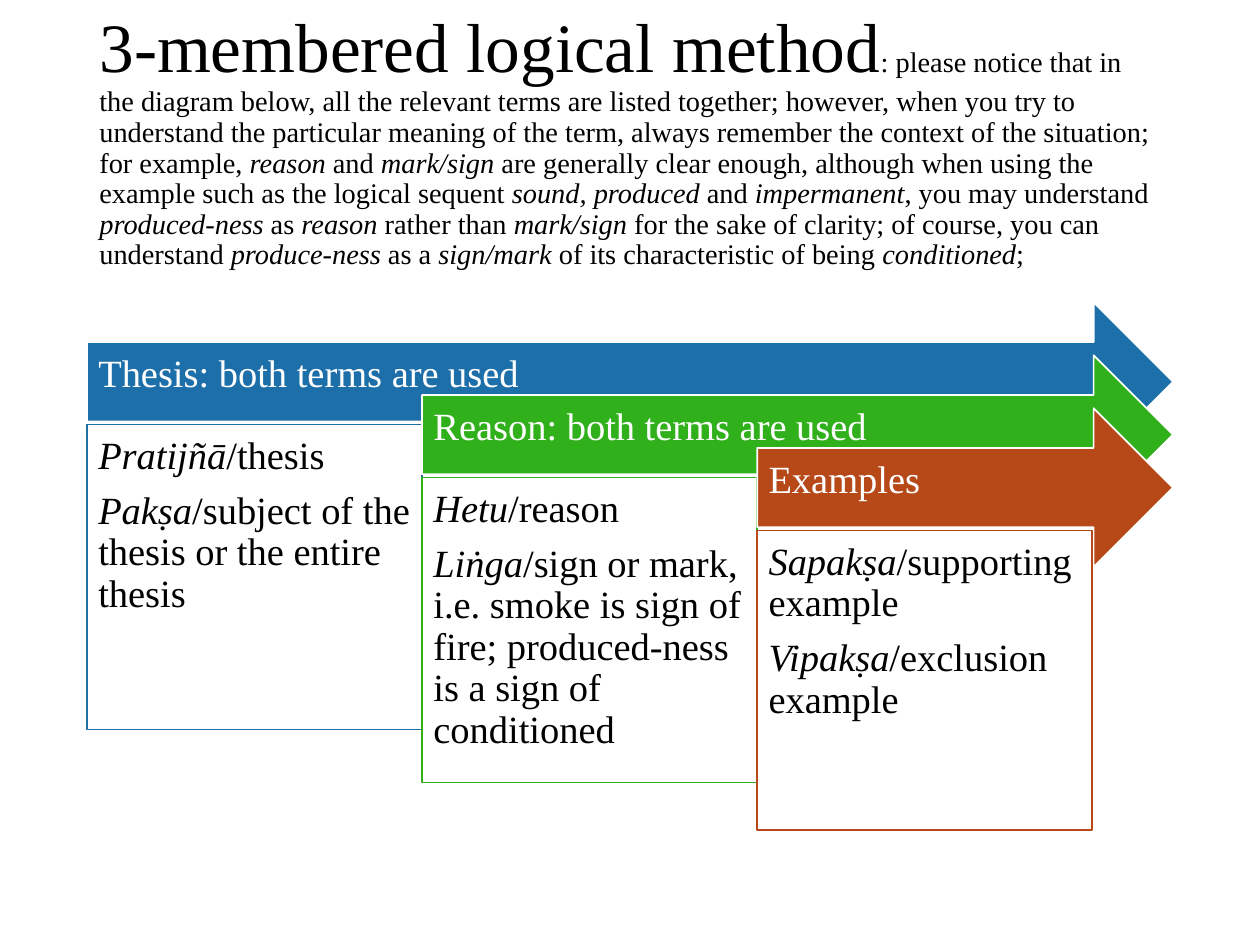
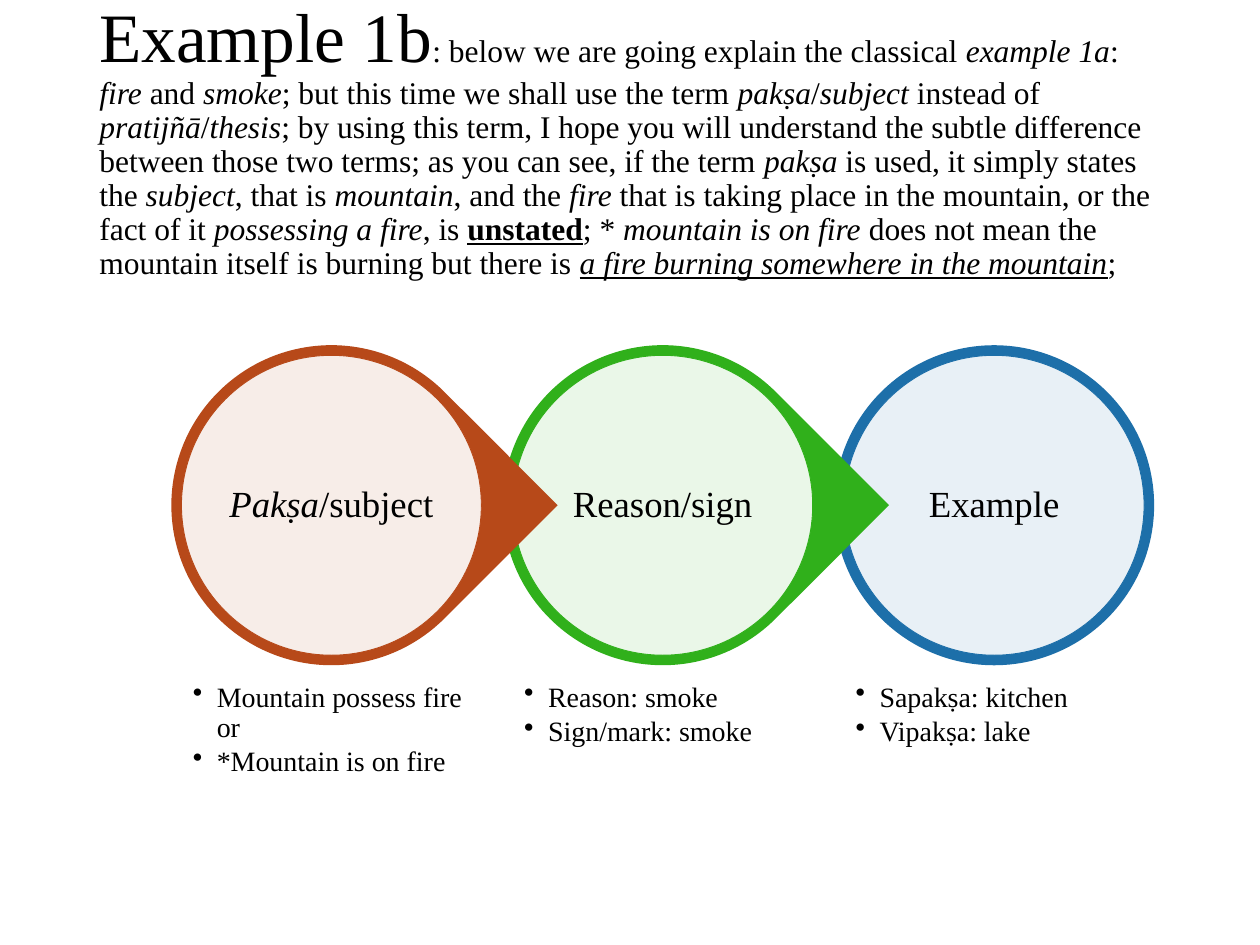
from itertools import groupby

from lxml.etree import SubElement
from pptx import Presentation
from pptx.dml.color import RGBColor
from pptx.enum.shapes import MSO_SHAPE as Shape
from pptx.enum.text import MSO_ANCHOR as Anchor, MSO_AUTO_SIZE as AutoSize, PP_ALIGN as Align
from pptx.oxml.ns import qn
from pptx.util import Inches, Pt

FONT = "Times New Roman"
COLORS = {
    "blue": "1D6FA9",
    "green": "30B01B",
    "rust": "B74919",
    "white": "FFFFFF",
    "black": "000000",
}
# Inline marks that switch a format on and off
MARKS = {"_": "italic", "~": "underline", "^": "bold"}


def rgb(name):
    return RGBColor.from_string(COLORS[name])


class DeckBuilder:
    """Holds the shared style and the current page."""

    def __init__(self):
        self.deck = Presentation()
        self.deck.slide_width, self.deck.slide_height = Inches(10), Inches(7.5)
        self.page = None

    def new_page(self):
        self.page = self.deck.slides.add_slide(self.deck.slide_layouts[6])

    def spans(self, para, text, size, color="black"):
        """Add marked text to a paragraph, one span for each change of format."""
        active = {name: False for name in MARKS.values()}
        for is_mark, group in groupby(text, key=lambda char: char in MARKS):
            if is_mark:
                for mark in group:
                    active[MARKS[mark]] = not active[MARKS[mark]]
                continue
            span = para.add_run()
            span.text = "".join(group)
            formats = {"name": FONT, "size": Pt(size)}
            formats.update({name: True for name, on in active.items() if on})
            for name, value in formats.items():
                setattr(span.font, name, value)
            span.font.color.rgb = rgb(color)

    def frame(self, box, insets, anchor=Anchor.TOP):
        """Prepare a text frame; insets run left, top, right, bottom."""
        frame = box.text_frame
        formats = {"word_wrap": True, "auto_size": AutoSize.NONE, "vertical_anchor": anchor}
        sides = ("left", "top", "right", "bottom")
        formats.update({f"margin_{side}": Inches(gap) for side, gap in zip(sides, insets)})
        for name, value in formats.items():
            setattr(frame, name, value)
        return frame

    def paragraphs(self, frame, texts, size, color="black", align=Align.LEFT, after=0.35,
                   bullet=False):
        """Add one paragraph per text; after is a share of the text size."""
        for index, text in enumerate(texts):
            para = frame.add_paragraph() if index else frame.paragraphs[0]
            formats = {"alignment": align, "line_spacing": 0.9, "space_after": Pt(after * size)}
            for name, value in formats.items():
                setattr(para, name, value)
            if bullet:
                props = para._p.get_or_add_pPr()
                props.set("marL", str(Inches(0.19)))
                props.set("indent", str(-Inches(0.19)))
                SubElement(props, qn("a:buChar")).set("char", "•")
            self.spans(para, text, size, color)

    def text_box(self, left, top, width, height):
        return self.page.shapes.add_textbox(*map(Inches, (left, top, width, height)))

    def title(self, heading, remark, remark_size):
        box = self.text_box(0.69, 0.4, 8.62, 1.45)
        frame = self.frame(box, (0.1, 0.05, 0.1, 0.05), Anchor.MIDDLE)
        self.paragraphs(frame, [heading], 39.6, after=0)
        self.spans(frame.paragraphs[0], remark, remark_size)

    def shape(self, kind, left, top, width, height, fill, line=None, line_width=1.0, opacity=100):
        shape = self.page.shapes.add_shape(kind, *map(Inches, (left, top, width, height)))
        shape.shadow.inherit = False
        shape.fill.solid()
        shape.fill.fore_color.rgb = rgb(fill)
        if opacity < 100:
            color = shape._element.spPr.find(qn("a:solidFill"))[0]
            SubElement(color, qn("a:alpha")).set("val", str(opacity * 1000))
        if line:
            shape.line.color.rgb = rgb(line)
            shape.line.width = Pt(line_width)
        else:
            shape.line.fill.background()
        return shape

    def bullets(self, left, top, width, height, texts):
        frame = self.frame(self.text_box(left, top, width, height), [0.09] * 4)
        self.paragraphs(frame, texts, 16, after=0.15, bullet=True)


def build_method_page(builder):
    builder.new_page()
    builder.title(
        "3-membered logical method",
        ": please notice that in the diagram below, all the relevant terms are listed together; "
        "however, when you try to understand the particular meaning of the term, always remember "
        "the context of the situation; for example, _reason_ and _mark/sign _are generally clear "
        "enough, although when using the example such as the logical sequent _sound, produced _and"
        "_ impermanent_, you may understand _produced-ness_ as _reason_ rather than _mark/sign_ "
        "for the sake of clarity; of course, you can understand _produce-ness_ as a _sign/mark _"
        "of its characteristic of being _conditioned_;",
        16.2,
    )

    # Stepped arrows, each with its terms below
    members = [
        ("blue", "Thesis: both terms are used", 2.42,
         ["_Pratijñā_/thesis", "_Pakṣa_/subject of the thesis or the entire thesis"]),
        ("green", "Reason: both terms are used", 2.42,
         ["_Hetu_/reason", "_Liṅga_/sign or mark, i.e. smoke is sign of fire; "
                           "produced-ness is a sign of conditioned"]),
        ("rust", "Examples", 2.38,
         ["_Sapakṣa_/supporting example", "_Vipakṣa_/exclusion example"]),
    ]
    right_edge, column = 9.31, 2.66
    for index, (color, label, height, terms) in enumerate(members):
        left, top = 0.69 + index * column, 2.4 + index * 0.42
        arrow = builder.shape(Shape.RIGHT_ARROW, left, top, right_edge - left, 1.26, color, "white")
        frame = builder.frame(arrow, (0.09, 0.09, 0.28, 0.2), Anchor.MIDDLE)
        builder.paragraphs(frame, [label], 22, "white")
        panel = builder.shape(Shape.RECTANGLE, left, top + 0.97, column, height, "white", color)
        builder.paragraphs(builder.frame(panel, [0.09] * 4), terms, 22)


def build_example_page(builder):
    builder.new_page()
    builder.title(
        "Example 1b",
        ": below we are going explain the classical _example 1a_: _fire_ and _smoke_; but this "
        "time we shall use the term _pakṣa_/_subject_ instead of _pratijñā_/_thesis_; by using "
        "this term, I hope you will understand the subtle difference between those two terms; as "
        "you can see, if the term _pakṣa_ is used, it simply states the _subject_, that is "
        "_mountain_, and the _fire _that is taking place in the mountain, or the fact of it "
        "_possessing a fire_, is ^~unstated~^; * _mountain is on fire_ does not mean the mountain "
        "itself is burning but there is _~a fire burning somewhere in the mountain~_;",
        18,
    )

    # Chain of rings, laid from right to left so that each tip overlaps the next ring
    rings = [
        ("rust", "_Pakṣa_/subject", ["Mountain possess fire or", "*Mountain is on fire"]),
        ("green", "Reason/sign", ["Reason: smoke", "Sign/mark: smoke"]),
        ("blue", "Example", ["Sapakṣa: kitchen", "Vipakṣa: lake"]),
    ]
    outer, inner, step, middle = 2.54, 2.38, 2.63, 4.01
    last = len(rings) - 1
    for index, (color, label, notes) in reversed(list(enumerate(rings))):
        center = step * (index + 1)
        kind = Shape.OVAL if index == last else Shape.TEAR
        ring = builder.shape(kind, center - outer / 2, middle - outer / 2, outer, outer, color)
        ring.rotation = 0 if index == last else 45
        left = center - inner / 2
        disc = builder.shape(Shape.OVAL, left, middle - inner / 2, inner, inner,
                             "white", color, 0.5, opacity=90)
        frame = builder.frame(disc, [0.03] * 4, Anchor.MIDDLE)
        builder.paragraphs(frame, [label], 21, align=Align.CENTER)
        builder.bullets(left, 5.33, inner, 1.4, notes)


def main():
    builder = DeckBuilder()
    build_method_page(builder)
    build_example_page(builder)
    builder.deck.save("out.pptx")


if __name__ == "__main__":
    main()
